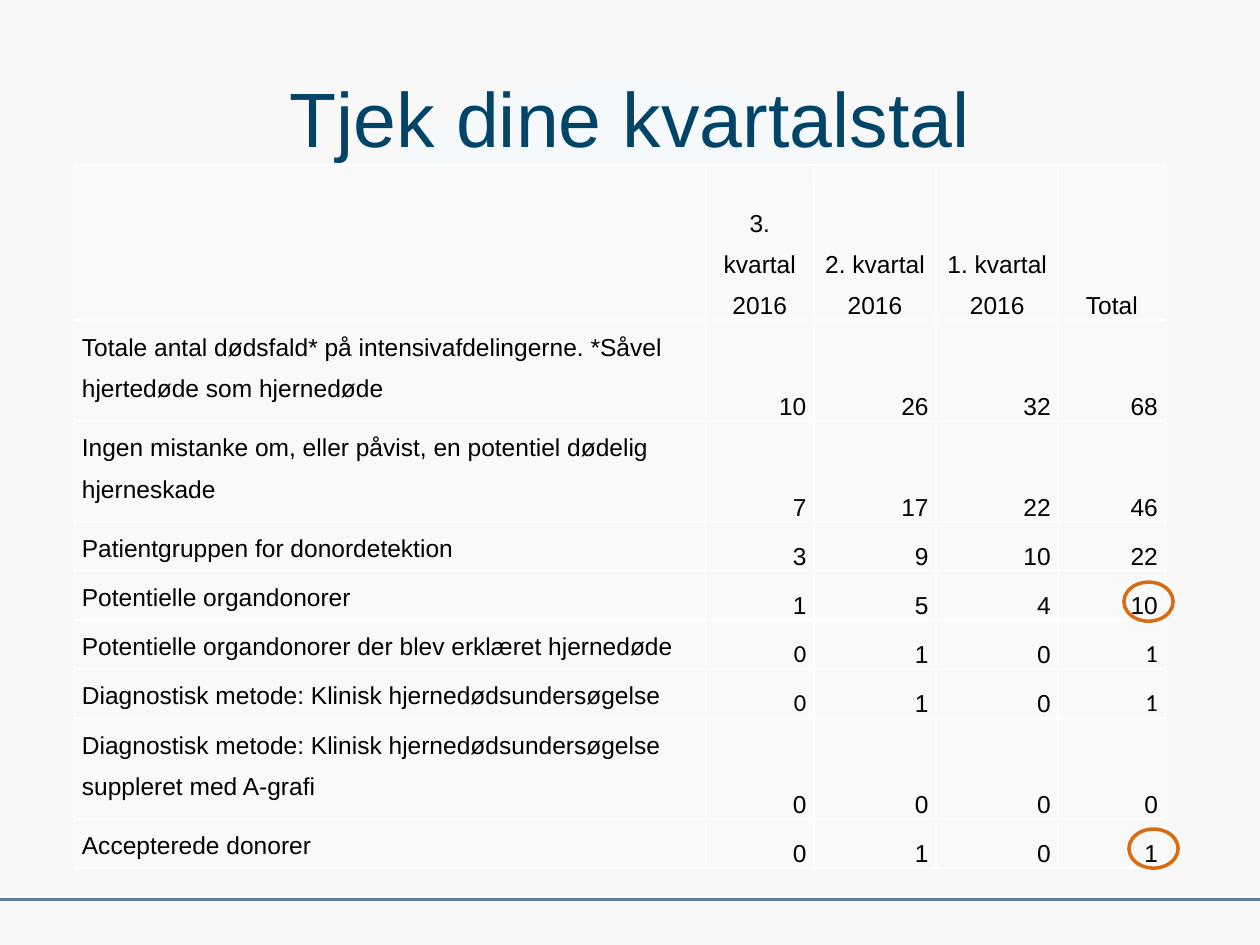
from lxml.etree import SubElement
from pptx import Presentation
from pptx.dml.color import RGBColor
from pptx.enum.shapes import MSO_CONNECTOR, MSO_SHAPE
from pptx.enum.text import MSO_ANCHOR, PP_ALIGN
from pptx.oxml import parse_xml
from pptx.oxml.ns import nsdecls, qn
from pptx.util import Inches, Pt

HEADS = ["", "3. kvartal 2016", "2. kvartal 2016", "1. kvartal 2016", "Total"]
ROWS = [
    ("Totale antal dødsfald* på intensivafdelingerne. *Såvel hjertedøde som hjernedøde", 10, 26, 32, 68),
    ("Ingen mistanke om, eller påvist, en potentiel dødelig hjerneskade", 7, 17, 22, 46),
    ("Patientgruppen for donordetektion", 3, 9, 10, 22),
    ("Potentielle organdonorer", 1, 5, 4, 10),
    ("Potentielle organdonorer der blev erklæret hjernedøde", 0, 1, 0, 1),
    ("Diagnostisk metode: Klinisk hjernedødsundersøgelse", 0, 1, 0, 1),
    ("Diagnostisk metode: Klinisk hjernedødsundersøgelse suppleret med A-grafi", 0, 0, 0, 0),
    ("Accepterede donorer", 0, 1, 0, 1),
]
WIDTHS = [5.01, 0.86, 0.97, 0.97, 0.85]
HIGH, LOW = 0.8, 0.39
HEIGHTS = [1.23, HIGH, HIGH, LOW, LOW, LOW, LOW, HIGH, LOW]
CALIBRI = {(row, col) for row in (5, 6) for col in (1, 4)}

TITLE = {"name": "Arial", "size": Pt(44)}
BODY = {"name": "Arial", "size": Pt(14)}
PARA = {"line_spacing": 1.5, "space_after": Pt(4)}
INSET = {"margin_left": Inches(0.06), "margin_right": Inches(0.06),
         "margin_top": 0, "margin_bottom": 0}


def color(code):
    return RGBColor.from_string(code)


def apply(item, values):
    for key, value in values.items():
        setattr(item, key, value)


class Deck:
    """Holds the colours and the current slide."""

    ink, blue, rule = "000000", "004567", "5E7D98"
    ring, fill, edge = "D86C14", "F9F9F9", "FFFFFF"
    glow, rim = "F6F9FC", "F8F8F8"

    def __init__(self, show):
        self.slide = show.slides.add_slide(show.slide_layouts[6])
        self.shapes = self.slide.shapes

    def backdrop(self):
        self.slide.background.fill.solid()
        props = self.slide.element.find(".//" + qn("p:bgPr"))
        grad = parse_xml(
            f'<a:gradFill {nsdecls("a")} rotWithShape="1"><a:gsLst>'
            f'<a:gs pos="0"><a:srgbClr val="{self.glow}"/></a:gs>'
            f'<a:gs pos="100000"><a:srgbClr val="{self.rim}"/></a:gs></a:gsLst>'
            '<a:path path="circle"><a:fillToRect l="50000" t="50000" r="50000" b="50000"/>'
            '</a:path></a:gradFill>')
        props.replace(props.find(qn("a:solidFill")), grad)

    def line(self, x1, y1, x2, y2):
        line = self.shapes.add_connector(
            MSO_CONNECTOR.STRAIGHT, *map(Inches, (x1, y1, x2, y2)))
        line.line.color.rgb = color(self.rule)
        line.line.width = Pt(1.5)
        SubElement(line.element.spPr, qn("a:effectLst"))

    def title(self, text, *box):
        frame = self.shapes.add_textbox(*map(Inches, box)).text_frame
        apply(frame, {"word_wrap": True, "vertical_anchor": MSO_ANCHOR.MIDDLE})
        para = frame.paragraphs[0]
        para.alignment = PP_ALIGN.CENTER
        self.label(para, text, TITLE, self.blue)

    def label(self, para, text, style, tint):
        run = para.add_run()
        run.text = text
        apply(run.font, style)
        run.font.color.rgb = color(tint)

    def border(self, cell):
        props = cell._tc.get_or_add_tcPr()
        for side in ("lnL", "lnR", "lnT", "lnB"):
            props.append(parse_xml(
                f'<a:{side} {nsdecls("a")} w="{Pt(1)}"><a:solidFill>'
                f'<a:srgbClr val="{self.edge}"/></a:solidFill></a:{side}>'))

    def cell(self, cell, text, align, style):
        apply(cell, INSET)
        left = align == PP_ALIGN.LEFT
        cell.vertical_anchor = MSO_ANCHOR.TOP if left else MSO_ANCHOR.BOTTOM
        self.border(cell)
        cell.fill.solid()
        cell.fill.fore_color.rgb = color(self.fill)
        if text:
            para = cell.text_frame.paragraphs[0]
            apply(para, {**PARA, "alignment": align})
            self.label(para, text, style, self.ink)

    def table(self, x, y, rows):
        grid = self.shapes.add_table(
            len(rows), len(WIDTHS), Inches(x), Inches(y),
            Inches(sum(WIDTHS)), Inches(sum(HEIGHTS))).table
        apply(grid, {"first_row": False, "horz_banding": False})
        for col, width in zip(grid.columns, WIDTHS):
            col.width = Inches(width)
        for row, height in zip(grid.rows, HEIGHTS):
            row.height = Inches(height)
        for r, row in enumerate(rows):
            for c, value in enumerate(row):
                align = (PP_ALIGN.CENTER if r == 0 else
                         PP_ALIGN.LEFT if c == 0 else PP_ALIGN.RIGHT)
                style = {**BODY, "name": "Calibri"} if (r, c) in CALIBRI else BODY
                self.cell(grid.cell(r, c), str(value), align, style)

    def circle(self, x, y):
        ring = self.shapes.add_shape(
            MSO_SHAPE.OVAL, *map(Inches, (x, y, 0.39, 0.31)))
        ring.shadow.inherit = False
        ring.fill.background()
        ring.line.color.rgb = color(self.ring)
        ring.line.width = Pt(2)


def main():
    show = Presentation()
    apply(show, {"slide_width": Inches(10), "slide_height": Inches(7.5)})
    deck = Deck(show)
    deck.backdrop()
    deck.line(0, 7.14, 10, 7.14)
    deck.title("Tjek dine kvartalstal", 0.5, 0.3, 9, 1.25)
    deck.table(0.59, 1.31, [HEADS, *ROWS])
    deck.circle(8.92, 4.62)
    deck.circle(8.96, 6.58)
    show.save("out.pptx")


if __name__ == "__main__":
    main()
